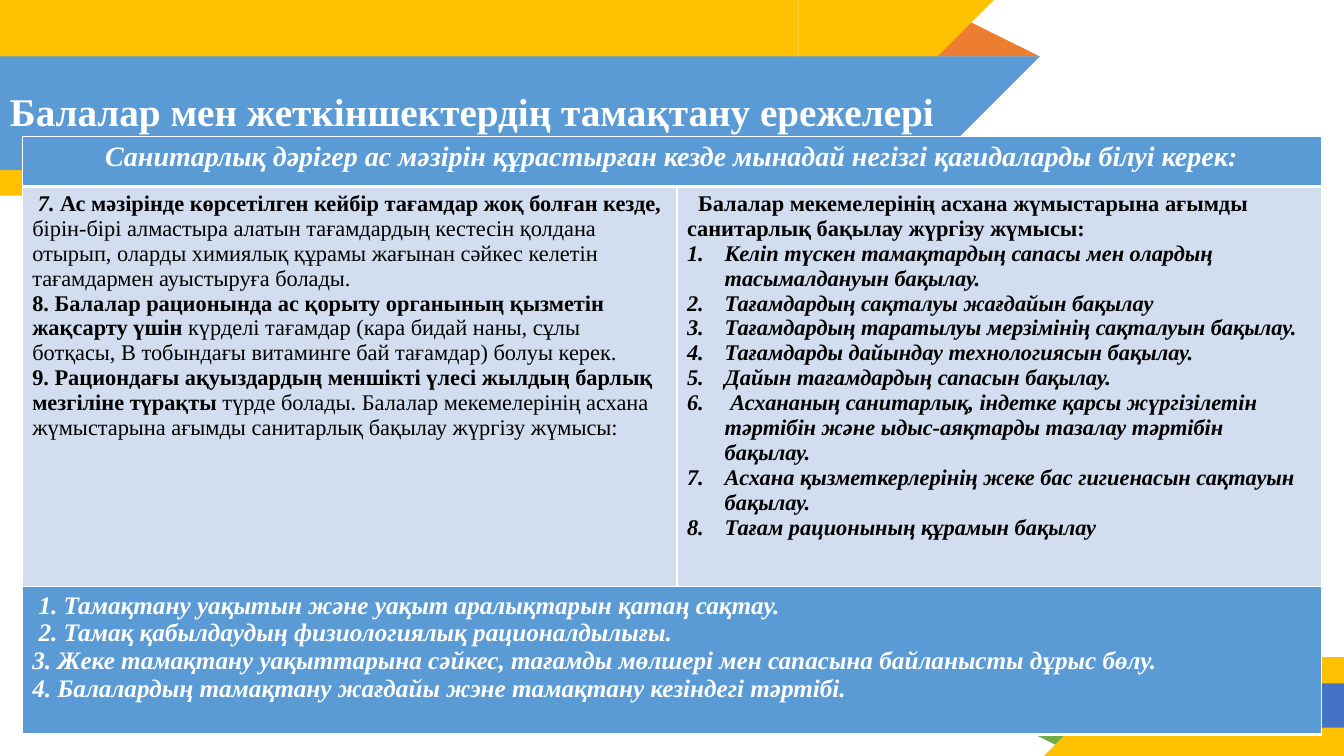
"""Build a slide of nutrition rules for children and teenagers."""
import pptx
import pptx.dml.color
import pptx.enum.shapes
import pptx.enum.text
import pptx.oxml
import pptx.oxml.ns
import pptx.util
from pptx.util import Cm

RGBColor = pptx.dml.color.RGBColor
WHITE = RGBColor(0xFF, 0xFF, 0xFF)
BLACK = RGBColor(0x00, 0x00, 0x00)
YELLOW = RGBColor(0xFF, 0xC0, 0x00)
SKY = RGBColor(0x5B, 0x9B, 0xD5)
PALE = RGBColor(0xD2, 0xDE, 0xEF)
NAVY = RGBColor(0x44, 0x72, 0xC4)
ORANGE = RGBColor(0xED, 0x7D, 0x31)
GREEN = RGBColor(0x70, 0xAD, 0x47)

SHAPE = pptx.enum.shapes.MSO_SHAPE
ALIGN = pptx.enum.text.PP_ALIGN

TITLE = "Балалар мен жеткіншектердің тамақтану ережелері"
HEADER = "Санитарлық дәрігер ас мәзірін құрастырған кезде мынадай негізгі қағидаларды білуі керек:"
MENU_RULES = [
    ("7. ", "Ас мәзірінде көрсетілген кейбір тағамдар жоқ болған кезде, ",
     "бірін-бірі алмастыра алатын тағамдардың кестесін қолдана отырып, оларды химиялық "
     "құрамы жағынан сәйкес келетін тағамдармен ауыстыруға болады."),
    ("", "8. Балалар рационында ас қорыту органының қызметін жақсарту үшін ",
     "күрделі тағамдар (кара бидай наны, сұлы ботқасы, В тобындағы витаминге бай "
     "тағамдар) болуы керек."),
    ("", "9. Рациондағы ақуыздардың меншікті үлесі жылдың барлық мезгіліне түрақты ",
     "түрде болады. Балалар мекемелерінің асхана жүмыстарына ағымды санитарлық бақылау "
     "жүргізу жүмысы:"),
]
CONTROL_TITLE = ("Балалар мекемелерінің асхана жүмыстарына ағымды санитарлық "
                 "бақылау жүргізу жүмысы:")
CONTROLS = [
    "Келіп түскен тамақтардың сапасы мен олардың тасымалдануын бақылау.",
    "Тағамдардың сақталуы жағдайын бақылау",
    "Тағамдардың таратылуы мерзімінің сақталуын бақылау.",
    "Тағамдарды дайындау технологиясын бақылау.",
    "Дайын тағамдардың сапасын бақылау.",
    " Асхананың санитарлық, індетке қарсы жүргізілетін тәртібін және ыдыс-аяқтарды "
    "тазалау тәртібін бақылау.",
    "Асхана қызметкерлерінің жеке бас гигиенасын сақтауын бақылау.",
    "Тағам рационының құрамын бақылау",
]
MEAL_RULES = [
    " 1. Тамақтану уақытын және уақыт аралықтарын қатаң сақтау.",
    " 2. Тамақ қабылдаудың физиологиялық рационалдылығы.",
    "3. Жеке тамақтану уақыттарына сәйкес, тағамды мөлшері мен сапасына байланысты дұрыс бөлу.",
    "4. Балалардың тамақтану жағдайы жэне тамақтану кезіндегі тәртібі.",
]


class SlideBuilder:
    """Draws styled elements on the current slide."""

    font_name = "Times New Roman"

    def __init__(self, page):
        """Keep the page to draw on."""
        self.page = page

    def shape(self, kind, left, top, width, height, color, rotation=0):
        """Add a plain filled shape."""
        shape = self.page.shapes.add_shape(kind, Cm(left), Cm(top), Cm(width), Cm(height))
        shape.shadow.inherit = False
        shape.fill.solid()
        shape.fill.fore_color.rgb = color
        shape.line.fill.background()
        shape.rotation = rotation
        return shape

    def peak(self, left, top, width, height, color, rotation=0):
        """Add a small triangle with its tip off centre."""
        triangle = self.shape(SHAPE.ISOSCELES_TRIANGLE, left, top, width, height, color, rotation)
        triangle.adjustments[0] = 0.324

    def top_band(self, top, length, height, color):
        """Add a band from the left edge with a slanted right end."""
        self.shape(SHAPE.RECTANGLE, 0, top, length, height, color)
        self.shape(SHAPE.RIGHT_TRIANGLE, length, top, height, height, color, 90)

    def bottom_band(self, left, top, length, height, color):
        """Add a band with a slanted left end."""
        self.shape(SHAPE.RECTANGLE, left, top, length, height, color)
        self.shape(SHAPE.RIGHT_TRIANGLE, left - height, top, height, height, color, 270)

    def title(self, text, left, top, width, height):
        """Add the slide title."""
        box = self.page.shapes.add_textbox(Cm(left), Cm(top), Cm(width), Cm(height))
        frame = box.text_frame
        frame.word_wrap = True
        frame.vertical_anchor = pptx.enum.text.MSO_ANCHOR.MIDDLE
        self.paragraph(frame, [(text, None, None)], 28, WHITE, italic=False).line_spacing = 0.9

    def paragraph(self, frame, spans, size, color, bold=True, italic=True):
        """Write spans of (text, bold, italic) into the next paragraph."""
        para = frame.paragraphs[0] if not frame.text else frame.add_paragraph()
        para.font.name = self.font_name
        para.font.size = pptx.util.Pt(size)
        para.font.color.rgb = color
        para.font.bold = bold
        para.font.italic = italic
        for text, span_bold, span_italic in spans:
            span = para.add_run()
            span.text = text
            span.font.bold = span_bold
            span.font.italic = span_italic
        return para

    def indent(self, para, margin, first, numbered=False):
        """Indent a paragraph and number it if asked."""
        props = para._p.get_or_add_pPr()
        props.set("marL", str(Cm(margin)))
        props.set("indent", str(Cm(first)))
        if numbered:
            number = pptx.oxml.parse_xml(
                f'<a:buAutoNum {pptx.oxml.ns.nsdecls("a")} type="arabicPeriod"/>')
            props.insert_element_before(number, "a:tabLst", "a:defRPr", "a:extLst")

    def table(self, left, top, columns, rows):
        """Add an unbanded table with the given column widths and row heights."""
        table = self.page.shapes.add_table(
            len(rows), len(columns), Cm(left), Cm(top), Cm(sum(columns)), Cm(sum(rows))).table
        table.first_row = table.horz_banding = False
        for column, width in zip(table.columns, columns):
            column.width = Cm(width)
        for row, height in zip(table.rows, rows):
            row.height = Cm(height)
        return table

    def cell(self, cell, color, borders):
        """Fill a cell and give it white borders, sides mapped to points."""
        cell.fill.solid()
        cell.fill.fore_color.rgb = color
        props = cell._tc.get_or_add_tcPr()
        for place, (side, points) in enumerate(borders.items()):
            props.insert(place, pptx.oxml.parse_xml(
                f'<a:ln{side} {pptx.oxml.ns.nsdecls("a")} w="{pptx.util.Pt(points)}">'
                f'<a:solidFill><a:srgbClr val="{WHITE}"/></a:solidFill></a:ln{side}>'))
        return cell.text_frame


def main():
    """Build and save the deck."""
    deck = pptx.Presentation()
    deck.slide_width, deck.slide_height = Cm(33.87), Cm(19.05)
    slide = SlideBuilder(deck.slides.add_slide(deck.slide_layouts[6]))

    slide.peak(25.73, 18.34, 1.45, 0.48, GREEN, 180)
    slide.bottom_band(28.8, 16.56, 5.07, 2.49, YELLOW)
    slide.bottom_band(26.85, 17.22, 7.02, 1.12, NAVY)
    slide.peak(23.32, 0.46, 2.9, 0.97, ORANGE)
    slide.top_band(0, 20.12, 4.93, YELLOW)
    slide.top_band(1.42, 23.34, 2.87, SKY)
    slide.title(TITLE, 0, 1.45, 25.15, 2.84)

    heavy = {"L": 1, "R": 1, "T": 1, "B": 3}
    light = {"L": 1, "R": 1, "B": 1}
    rules = slide.table(0.56, 3.43, [16.5, 16.24], [1.27, 10.92])
    rules.cell(0, 0).merge(rules.cell(0, 1))
    slide.cell(rules.cell(0, 1), SKY, heavy)
    header = slide.cell(rules.cell(0, 0), SKY, heavy)
    slide.paragraph(header, [(HEADER, None, None)], 20, WHITE).alignment = ALIGN.CENTER

    menu = slide.cell(rules.cell(1, 0), PALE, light)
    for number, lead, detail in MENU_RULES:
        spans = [(lead, True, None), (detail, None, None)]
        if number:
            spans.insert(0, (number, True, True))
        para = slide.paragraph(menu, spans, 16, BLACK, bold=False, italic=False)
        if number:
            slide.indent(para, 0, 0.14)

    control = slide.cell(rules.cell(1, 1), PALE, light)
    para = slide.paragraph(control, [(CONTROL_TITLE, None, None)], 16, BLACK, italic=False)
    slide.indent(para, 0, 0.28)
    for text in CONTROLS:
        para = slide.paragraph(control, [(text, None, None)], 16, BLACK)
        slide.indent(para, 0.95, -0.95, numbered=True)

    meals = slide.table(0.56, 14.78, [32.74], [3.73])
    frame = slide.cell(meals.cell(0, 0), SKY, heavy)
    for text in MEAL_RULES:
        slide.paragraph(frame, [(text, None, None)], 18, WHITE)

    deck.save("out.pptx")


if __name__ == "__main__":
    main()
